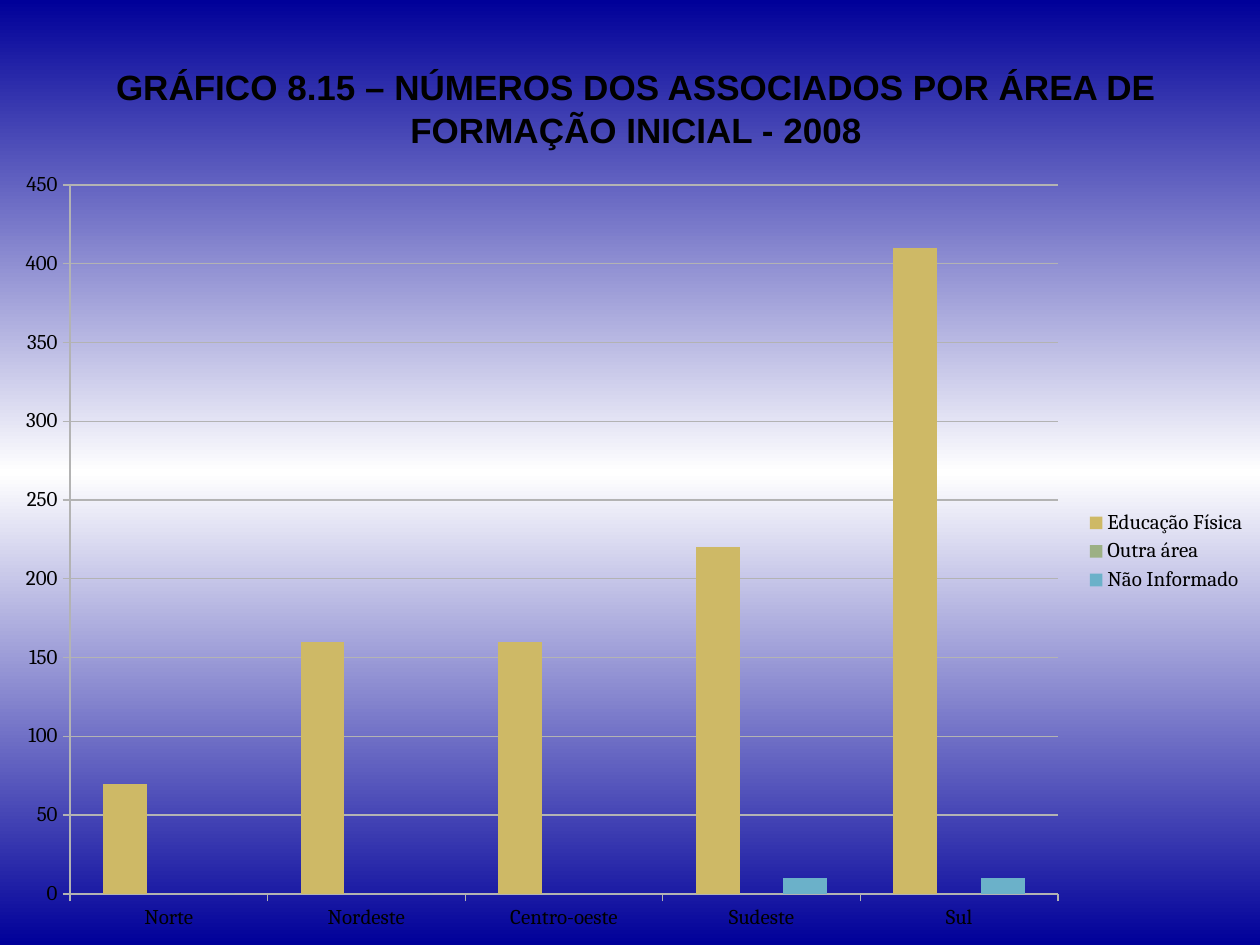
from copy import deepcopy
from dataclasses import dataclass

from lxml import etree
from pptx import Presentation
from pptx.chart.data import CategoryChartData
from pptx.dml.color import RGBColor
from pptx.enum.chart import XL_CHART_TYPE, XL_LEGEND_POSITION, XL_TICK_MARK
from pptx.enum.text import MSO_ANCHOR, PP_ALIGN
from pptx.oxml.ns import qn
from pptx.util import Pt

CLUSTERED = XL_CHART_TYPE.COLUMN_CLUSTERED
LEGEND_RIGHT = XL_LEGEND_POSITION.RIGHT
TICK_OUTSIDE = XL_TICK_MARK.OUTSIDE
MIDDLE = MSO_ANCHOR.MIDDLE
CENTER = PP_ALIGN.CENTER

EMU_PER_PX = 914400 / 126


@dataclass(frozen=True)
class Theme:
    edge: str = "000099"
    center: str = "FFFFFF"
    text: str = "000000"
    line: str = "B3B3B3"
    title_font: str = "Arial"
    chart_font: str = "Cambria"
    title_size: int = 20
    chart_size: int = 12


@dataclass(frozen=True)
class Box:
    left: int
    top: int
    width: int
    height: int

    def emu(self) -> tuple:
        return tuple(px(v) for v in (self.left, self.top, self.width, self.height))


@dataclass(frozen=True)
class Series:
    name: str
    color: str
    values: tuple


THEME = Theme()
PAGE = Box(0, 0, 1260, 945)
TITLE = Box(69, 29, 1134, 158)
CHART = Box(0, 158, 1260, 787)
PLOT = Box(70, 185, 988, 709)
REGIONS = ("Norte", "Nordeste", "Centro-oeste", "Sudeste", "Sul")
SERIES = (
    Series("Educação Física", "CEB966", (70, 160, 160, 220, 410)),
    Series("Outra área", "9CB084", (0, 0, 0, 0, 0)),
    Series("Não Informado", "6BB1C9", (0, 0, 0, 10, 10)),
)


def px(value: int) -> int:
    return round(value * EMU_PER_PX)


def rgb(color: str) -> RGBColor:
    return RGBColor.from_string(color)


def paint_background(page) -> None:
    fill = page.background.fill
    fill.gradient()
    fill.gradient_angle = 270
    # The default gradient has two stops; add a third between them
    stops = page._element.find(".//" + qn("a:gsLst"))
    stops.insert(1, deepcopy(stops[0]))
    colors = (THEME.edge, THEME.center, THEME.edge)
    for stop, position, color in zip(fill.gradient_stops, (0, 0.5, 1), colors):
        stop.position = position
        stop.color.rgb = rgb(color)


def write_title(page, text: str) -> None:
    title = page.shapes.title
    title.left, title.top, title.width, title.height = TITLE.emu()
    frame = title.text_frame
    frame.text = text
    frame.word_wrap = True
    frame.vertical_anchor = MIDDLE
    para = frame.paragraphs[0]
    para.alignment = CENTER
    para.font.name = THEME.title_font
    para.font.size = Pt(THEME.title_size)
    para.font.bold = True
    para.font.color.rgb = rgb(THEME.text)


def place_plot(chart) -> None:
    """Fix the inner plot area as fractions of the chart."""
    area = chart._chartSpace.find(".//" + qn("c:plotArea"))
    for old in area.findall(qn("c:layout")):
        area.remove(old)
    layout = etree.Element(qn("c:layout"))
    area.insert(0, layout)
    manual = etree.SubElement(layout, qn("c:manualLayout"))
    settings = {
        "layoutTarget": "inner",
        "xMode": "edge",
        "yMode": "edge",
        "x": (PLOT.left - CHART.left) / CHART.width,
        "y": (PLOT.top - CHART.top) / CHART.height,
        "w": PLOT.width / CHART.width,
        "h": PLOT.height / CHART.height,
    }
    for tag, value in settings.items():
        etree.SubElement(manual, qn("c:" + tag)).set("val", str(value))


def draw_chart(page) -> None:
    data = CategoryChartData()
    data.categories = REGIONS
    for series in SERIES:
        data.add_series(series.name, series.values)
    chart = page.shapes.add_chart(CLUSTERED, *CHART.emu(), data).chart
    chart.has_title = False
    chart.font.name = THEME.chart_font
    chart.font.size = Pt(THEME.chart_size)
    chart.font.color.rgb = rgb(THEME.text)
    place_plot(chart)

    # Columns
    plot = chart.plots[0]
    plot.gap_width = 150
    plot.overlap = 0
    plot.vary_by_categories = False
    for column, series in zip(plot.series, SERIES):
        column.format.fill.solid()
        column.format.fill.fore_color.rgb = rgb(series.color)

    # Axes and gridlines
    values = chart.value_axis
    values.minimum_scale, values.maximum_scale, values.major_unit = 0, 450, 50
    values.has_major_gridlines = True
    for axis in (chart.category_axis, values):
        axis.major_tick_mark = TICK_OUTSIDE
    for part in (chart.category_axis, values, values.major_gridlines):
        part.format.line.color.rgb = rgb(THEME.line)
        part.format.line.width = Pt(0.75)

    # Legend
    chart.has_legend = True
    chart.legend.position = LEGEND_RIGHT
    chart.legend.include_in_layout = False


def main() -> None:
    deck = Presentation()
    deck.slide_width, deck.slide_height = px(PAGE.width), px(PAGE.height)
    page = deck.slides.add_slide(deck.slide_layouts.get_by_name("Title Only"))
    paint_background(page)
    write_title(
        page,
        "GRÁFICO 8.15 – NÚMEROS DOS ASSOCIADOS POR ÁREA DE FORMAÇÃO INICIAL - 2008",
    )
    draw_chart(page)
    deck.save("out.pptx")


if __name__ == "__main__":
    main()
